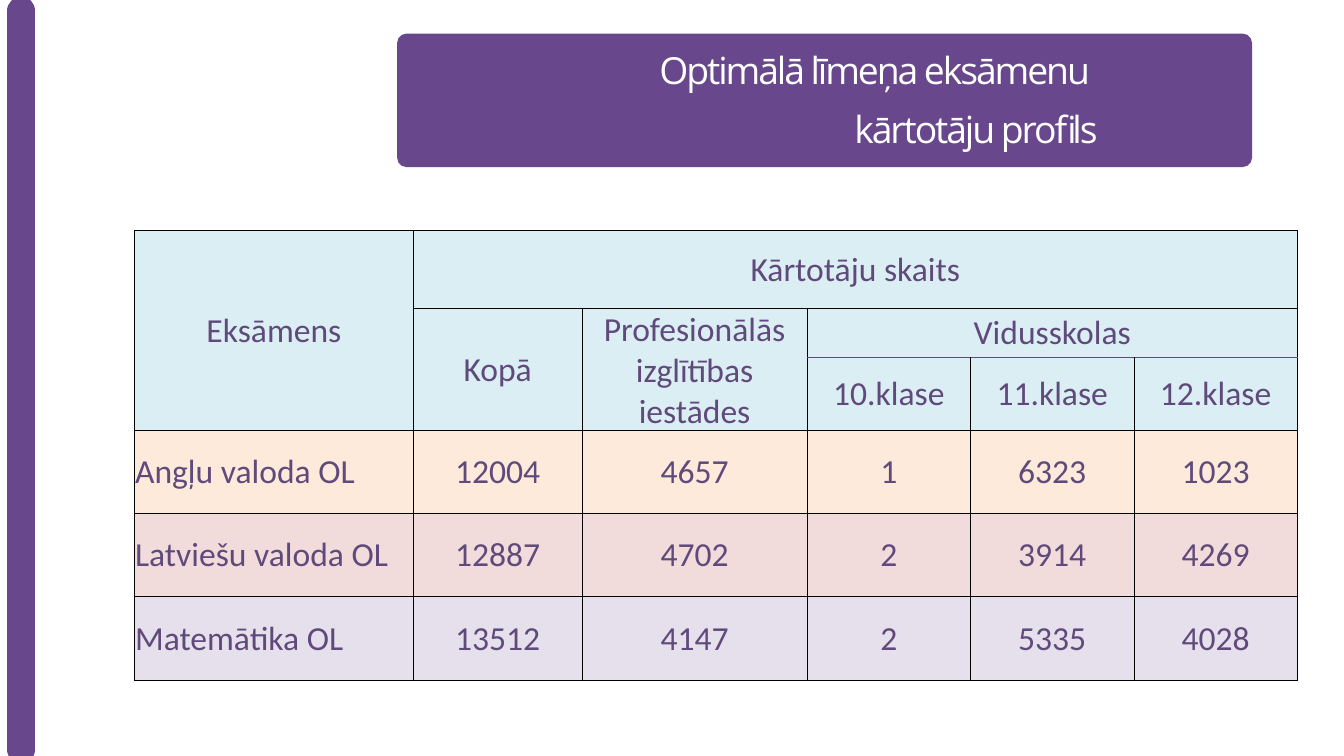
from dataclasses import dataclass

from lxml.etree import SubElement
from pptx import Presentation
from pptx.dml.color import RGBColor
from pptx.enum.shapes import MSO_CONNECTOR, MSO_SHAPE
from pptx.enum.text import MSO_ANCHOR, PP_ALIGN
from pptx.oxml.ns import qn
from pptx.util import Pt


@dataclass(frozen=True)
class Theme:
    purple: str = "68478D"
    ink: str = "604A7B"
    white: str = "FFFFFF"
    border: str = "000000"
    header: str = "DBEEF4"
    title_font: str = "Open Sans"
    table_font: str = "Calibri"
    title_size: float = 40
    table_size: float = 36


@dataclass(frozen=True)
class HeaderCell:
    text: str
    row: int
    column: int
    row_span: int = 1
    column_span: int = 1


@dataclass(frozen=True)
class ExamRow:
    name: str
    counts: tuple[int, ...]
    fill: str


THEME = Theme()
TITLE_LINES = ("Optimālā līmeņa eksāmenu ", "kārtotāju profils")
COLUMN_WIDTHS = (299, 180.5, 241.5, 175, 175, 175)
HEADER_HEIGHTS = (83.5, 52.5, 77.5)
EXAM_HEIGHT = 89.25
HEADERS = (
    HeaderCell("Eksāmens", 0, 0, row_span=3),
    HeaderCell("Kārtotāju skaits", 0, 1, column_span=5),
    HeaderCell("Kopā", 1, 1, row_span=2),
    HeaderCell("Profesionālās izglītības iestādes", 1, 2, row_span=2),
    HeaderCell("Vidusskolas", 1, 3, column_span=3),
    HeaderCell("10.klase", 2, 3),
    HeaderCell("11.klase", 2, 4),
    HeaderCell("12.klase", 2, 5),
)
EXAMS = (
    ExamRow("Angļu valoda OL", (12004, 4657, 1, 6323, 1023), "FDEADA"),
    ExamRow("Latviešu valoda OL", (12887, 4702, 2, 3914, 4269), "F2DCDB"),
    ExamRow("Matemātika OL", (13512, 4147, 2, 5335, 4028), "E6E0EC"),
)


def color(value: str) -> RGBColor:
    return RGBColor.from_string(value)


def draw_side_bar(page) -> None:
    bar = page.shapes.add_connector(
        MSO_CONNECTOR.STRAIGHT, Pt(23), Pt(803), Pt(23), Pt(11.5)
    )
    bar.line.color.rgb = color(THEME.purple)
    bar.line.width = Pt(30)
    bar.line._get_or_add_ln().set("cap", "rnd")
    SubElement(bar._element.spPr, qn("a:effectLst"))


def draw_title(page) -> None:
    panel = page.shapes.add_shape(
        MSO_SHAPE.ROUNDED_RECTANGLE, Pt(425.5), Pt(36), Pt(916), Pt(143)
    )
    panel.adjustments[0] = 0.07
    panel.shadow.inherit = False
    panel.fill.solid()
    panel.fill.fore_color.rgb = color(THEME.purple)
    panel.line.fill.background()

    box = page.shapes.add_textbox(Pt(234), Pt(36), Pt(942), Pt(126))
    frame = box.text_frame
    frame.word_wrap = True
    frame.margin_left = frame.margin_right = 0
    frame.margin_top = frame.margin_bottom = 0
    frame.text = "\n".join(TITLE_LINES)
    for paragraph in frame.paragraphs:
        paragraph.alignment = PP_ALIGN.RIGHT
        paragraph.line_spacing = Pt(63)
        for span in paragraph.runs:
            span.font.name = THEME.title_font
            span.font.size = Pt(THEME.title_size)
            span.font.color.rgb = color(THEME.white)
            span._r.get_or_add_rPr().set("spc", "-220")


def set_borders(cell, row: int, column: int) -> None:
    in_schools = column >= 3
    colors = {
        "lnL": THEME.border,
        "lnR": THEME.border,
        "lnT": THEME.ink if in_schools and row == 2 else THEME.border,
        "lnB": THEME.ink if in_schools and row == 1 else THEME.border,
    }
    properties = cell._tc.get_or_add_tcPr()
    for side, value in colors.items():
        line = SubElement(properties, qn(f"a:{side}"), w=str(Pt(1)))
        fill = SubElement(line, qn("a:solidFill"))
        SubElement(fill, qn("a:srgbClr"), val=value)


def style_cell(cell, fill: str) -> None:
    cell.fill.solid()
    cell.fill.fore_color.rgb = color(fill)
    cell.vertical_anchor = MSO_ANCHOR.MIDDLE
    cell.margin_left = cell.margin_right = cell.margin_top = Pt(0.75)
    cell.margin_bottom = 0


def write_cell(cell, text: str, alignment: PP_ALIGN = PP_ALIGN.CENTER) -> None:
    cell.text_frame.text = text
    paragraph = cell.text_frame.paragraphs[0]
    paragraph.alignment = alignment
    font = paragraph.runs[0].font
    font.name = THEME.table_font
    font.size = Pt(THEME.table_size)
    font.color.rgb = color(THEME.ink)


def draw_exam_table(page) -> None:
    heights = HEADER_HEIGHTS + (EXAM_HEIGHT,) * len(EXAMS)
    fills = [THEME.header] * len(HEADER_HEIGHTS) + [exam.fill for exam in EXAMS]
    table = page.shapes.add_table(
        len(heights), len(COLUMN_WIDTHS),
        Pt(144), Pt(247), Pt(sum(COLUMN_WIDTHS)), Pt(sum(heights)),
    ).table
    table.first_row = False
    table.horz_banding = False
    for column, width in zip(table.columns, COLUMN_WIDTHS):
        column.width = Pt(width)
    for row_index, (height, fill) in enumerate(zip(heights, fills)):
        table.rows[row_index].height = Pt(height)
        for column_index in range(len(COLUMN_WIDTHS)):
            cell = table.cell(row_index, column_index)
            set_borders(cell, row_index, column_index)
            style_cell(cell, fill)

    for header in HEADERS:
        cell = table.cell(header.row, header.column)
        if header.row_span > 1 or header.column_span > 1:
            cell.merge(table.cell(
                header.row + header.row_span - 1,
                header.column + header.column_span - 1,
            ))
        write_cell(cell, header.text)
    for row_index, exam in enumerate(EXAMS, start=len(HEADER_HEIGHTS)):
        write_cell(table.cell(row_index, 0), exam.name, PP_ALIGN.LEFT)
        for column_index, count in enumerate(exam.counts, start=1):
            write_cell(table.cell(row_index, column_index), str(count))


def main() -> None:
    deck = Presentation()
    deck.slide_width = Pt(1440)
    deck.slide_height = Pt(810)
    page = deck.slides.add_slide(deck.slide_layouts[6])
    draw_title(page)
    draw_side_bar(page)
    draw_exam_table(page)
    deck.save("out.pptx")


if __name__ == "__main__":
    main()
